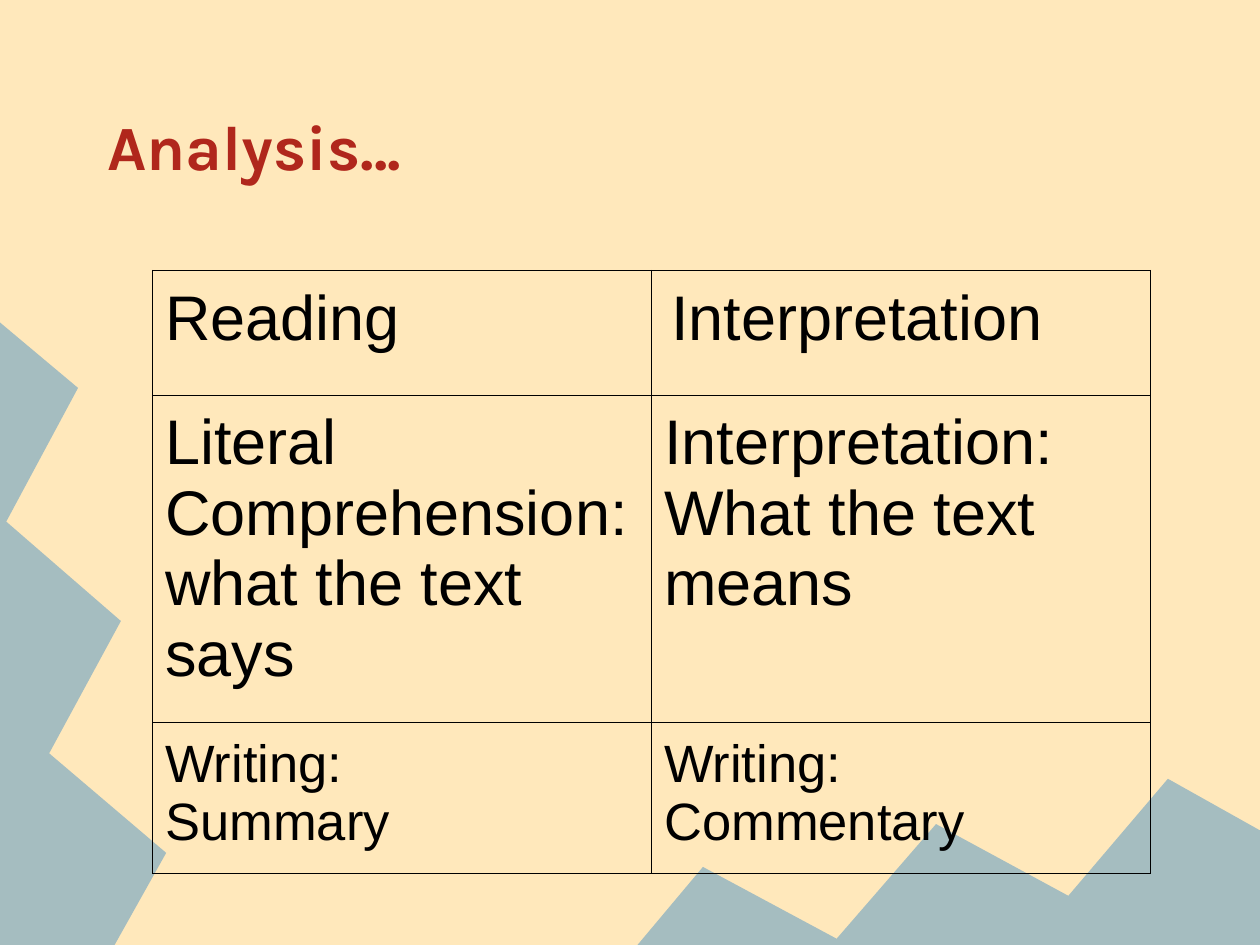
from lxml.etree import SubElement
from pptx import Presentation
from pptx.dml.color import RGBColor
from pptx.enum.text import MSO_ANCHOR, MSO_AUTO_SIZE, PP_ALIGN
from pptx.oxml.ns import qn
from pptx.util import Pt

CREAM, BLUE, RED, BLACK = "FFE8BB", "A5BDC0", "B0271C", "000000"
INSET = 7.2
LEFT_RIDGE = [(0, 0), (0, 355.7), (65.5, 355.7), (95, 303.1), (28.1, 246.2),
              (69.1, 170.6), (3.6, 113.8), (44.6, 37.4)]
BOTTOM_RIDGE = [(0, 95), (355.7, 95), (355.7, 29.5), (303.1, 0), (246.2, 66.9),
                (170.6, 25.9), (113.8, 91.4), (37.4, 50.4)]
# Each cell is a list of paragraphs, each paragraph a list of (text, size) runs.
ROWS = [
    [[[("Reading", 36)]], [[(" ", 14), ("Interpretation", 36)]]],
    [[[("Literal Comprehension:", 36)], [("what the text says", 36)]],
     [[("Interpretation:", 36)], [("What the text means", 36)]]],
    [[[("Writing:", 30)], [("Summary", 30)]],
     [[("Writing:", 30)], [("Commentary", 30)]]],
]
ROW_HEIGHTS = [71.3, 187, 86.3]


def color(value):
    return RGBColor.from_string(value)


def set_insets(target):
    target.margin_left = target.margin_right = Pt(INSET)
    target.margin_top = target.margin_bottom = Pt(INSET)


def add_run(paragraph, text, size, font_name, font_color, bold=False):
    run = paragraph.add_run()
    run.text = text
    font = run.font
    font.name, font.size, font.bold = font_name, Pt(size), bold
    font.color.rgb = color(font_color)


def add_ridge(slide, left, top, points):
    corners = [(Pt(left + x), Pt(top + y)) for x, y in points]
    builder = slide.shapes.build_freeform(*corners[0])
    builder.add_line_segments(corners[1:], close=True)
    shape = builder.convert_to_shape()
    shape.shadow.inherit = False
    shape.fill.solid()
    shape.fill.fore_color.rgb = color(BLUE)
    shape.line.fill.background()


def format_title(slide, left, top, width, height):
    title = slide.shapes.title
    title.left, title.top, title.width, title.height = map(Pt, (left, top, width, height))
    frame = title.text_frame
    set_insets(frame)
    frame.word_wrap = True
    frame.auto_size = MSO_AUTO_SIZE.NONE
    frame.vertical_anchor = MSO_ANCHOR.BOTTOM
    paragraph = frame.paragraphs[0]
    paragraph.alignment = PP_ALIGN.LEFT
    properties = paragraph._p.get_or_add_pPr()
    properties.set("marL", "0")
    properties.set("indent", str(Pt(18)))
    add_run(paragraph, "Analysis...", 36, "Karla", RED, bold=True)


def add_borders(cell):
    properties = cell._tc.get_or_add_tcPr()
    for side in ("a:lnL", "a:lnR", "a:lnT", "a:lnB"):
        line = SubElement(properties, qn(side), w=str(Pt(0.75)))
        fill = SubElement(line, qn("a:solidFill"))
        SubElement(fill, qn("a:srgbClr"), val=BLACK)


def fill_cell(cell, paragraphs):
    set_insets(cell)
    add_borders(cell)
    cell.fill.background()
    frame = cell.text_frame
    for index, runs in enumerate(paragraphs):
        paragraph = frame.add_paragraph() if index else frame.paragraphs[0]
        for text, size in runs:
            add_run(paragraph, text, size, "Arial", BLACK)


def add_comparison_table(slide, left, top, width):
    frame = slide.shapes.add_table(len(ROWS), len(ROWS[0]), Pt(left), Pt(top),
                                   Pt(width), Pt(sum(ROW_HEIGHTS)))
    table = frame.table
    table.first_row = table.horz_banding = False
    for row, height, contents in zip(table.rows, ROW_HEIGHTS, ROWS):
        row.height = Pt(height)
        for cell, paragraphs in zip(row.cells, contents):
            fill_cell(cell, paragraphs)


def main():
    presentation = Presentation()
    presentation.slide_width, presentation.slide_height = Pt(720), Pt(540)
    slide = presentation.slides.add_slide(presentation.slide_layouts[5])
    slide.background.fill.solid()
    slide.background.fill.fore_color.rgb = color(CREAM)
    add_ridge(slide, 0, 184.3, LEFT_RIDGE)
    add_ridge(slide, 364.3, 445, BOTTOM_RIDGE)
    format_title(slide, 36, 21.6, 648, 90)
    add_comparison_table(slide, 87.3, 154.5, 570.2)
    presentation.save("out.pptx")


if __name__ == "__main__":
    main()
